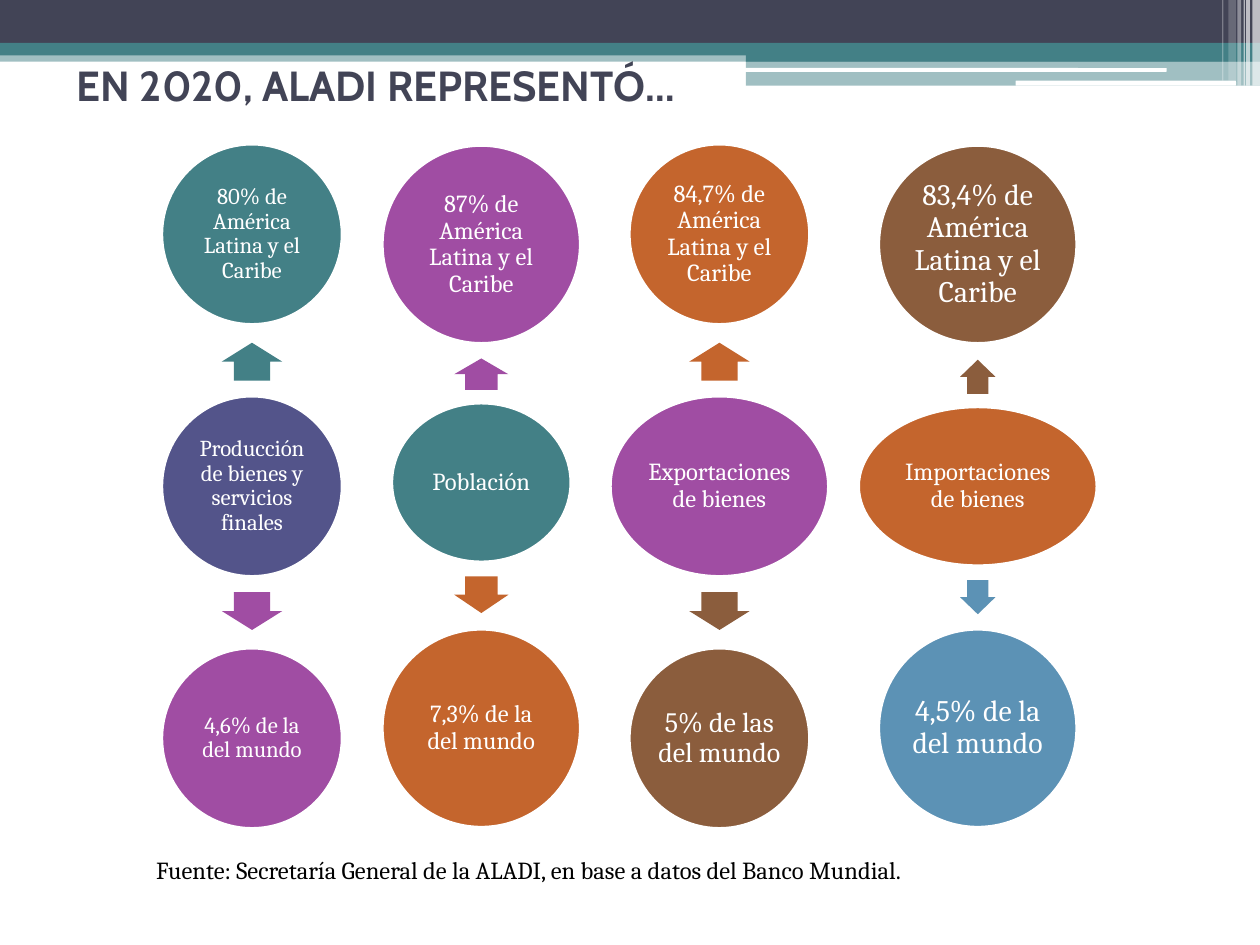
from dataclasses import dataclass

from lxml.etree import SubElement
from pptx import Presentation
from pptx.dml.color import RGBColor
from pptx.enum.shapes import MSO_SHAPE
from pptx.enum.text import MSO_ANCHOR, PP_ALIGN
from pptx.oxml.ns import qn
from pptx.util import Inches, Pt


@dataclass(frozen=True)
class Theme:
    """Colours, fonts and type sizes."""
    dark: str = "424456"
    teal: str = "438086"
    navy: str = "53548A"
    plum: str = "A04DA3"
    rust: str = "C4652D"
    brown: str = "8B5D3D"
    blue: str = "5C92B5"
    white: str = "FFFFFF"
    black: str = "000000"
    head: str = "Cabin"
    body: str = "Cambria"
    big: int = 24
    note: int = 14
    small: int = 13
    mid: int = 14
    large: int = 16
    huge: int = 17


class Deck:
    """Holds the theme and the current slide."""

    def __init__(self, theme):
        """Start a deck with one titled slide."""
        self.theme = theme
        self.show = Presentation()
        self.show.slide_width, self.show.slide_height = Inches(10), Inches(7.5)
        self.slide = self.show.slides.add_slide(self.show.slide_layouts[5])

    def label(self, frame, text, font, size, color, align, bold=False):
        """Set and format the text of a frame."""
        frame.text = text
        frame.word_wrap = True
        para = frame.paragraphs[0]
        para.alignment = align
        for run in para.runs:
            run.font.name, run.font.size, run.font.bold = font, Pt(size), bold
            run.font.color.rgb = RGBColor.from_string(color)
        return para

    def shape(self, kind, box, color, alpha=100):
        """Add a flat shape without an outline."""
        shape = self.slide.shapes.add_shape(kind, *map(Inches, box))
        shape.shadow.inherit = False
        shape.line.fill.background()
        shape.fill.solid()
        shape.fill.fore_color.rgb = RGBColor.from_string(color)
        if alpha < 100:
            tint = shape.element.find(".//" + qn("a:srgbClr"))
            SubElement(tint, qn("a:alpha")).set("val", str(alpha * 1000))
        return shape

    def circle(self, x, y, wide, high, color, text, size):
        """Add an ellipse with text, centred on a point."""
        box = (x - wide / 2, y - high / 2, wide, high)
        shape = self.shape(MSO_SHAPE.OVAL, box, color)
        shape.line.color.rgb = RGBColor.from_string(self.theme.white)
        shape.line.width = Pt(1.5)
        frame = shape.text_frame
        frame.margin_left = frame.margin_right = Inches(0.02)
        frame.margin_top = frame.margin_bottom = Inches(0.02)
        frame.vertical_anchor = MSO_ANCHOR.MIDDLE
        para = self.label(frame, text, self.theme.body, size,
                          self.theme.white, PP_ALIGN.CENTER)
        para.line_spacing = 0.9

    def arrow(self, x, y, long, wide, turn, color):
        """Add a turned block arrow, centred on a point."""
        box = (x - long / 2, y - wide / 2, long, wide)
        shape = self.shape(MSO_SHAPE.RIGHT_ARROW, box, color)
        shape.adjustments[0], shape.adjustments[1] = 0.6, 0.5
        shape.rotation = turn

    def title(self, text):
        """Fill the title and bring it to the front."""
        title = self.slide.shapes.title
        title.left, title.top = Inches(0.51), Inches(0.05)
        title.width, title.height = Inches(9), Inches(1.25)
        title.text_frame.vertical_anchor = MSO_ANCHOR.MIDDLE
        self.label(title.text_frame, text, self.theme.head, self.theme.big,
                   self.theme.dark, PP_ALIGN.LEFT, True)
        title.element.getparent().append(title.element)

    def note(self, text, box):
        """Add a line of source text."""
        area = self.slide.shapes.add_textbox(*map(Inches, box))
        self.label(area.text_frame, text, self.theme.body, self.theme.note,
                   self.theme.black, PP_ALIGN.LEFT)

    def banner(self):
        """Draw the bands and stripes along the top."""
        look = self.theme
        for box, color, alpha in (
            ((0, 0.4, 10, 0.09), look.teal, 50),
            ((0, 0, 10, 0.34), look.dark, 100),
            ((0, 0.34, 10, 0.1), look.teal, 100),
            ((5.92, 0.39, 4.08, 0.1), look.teal, 100),
            ((5.92, 0.48, 4.08, 0.2), look.teal, 50),
        ):
            self.shape(MSO_SHAPE.RECTANGLE, box, color, alpha)
        for box in ((5.91, 0.54, 3.35, 0.03), (8.06, 0.64, 1.75, 0.04)):
            self.shape(MSO_SHAPE.ROUNDED_RECTANGLE, box, look.white)
        for left, wide, high, alpha in (
            (9.94, 0.06, 0.68, 65), (9.89, 0.03, 0.68, 65),
            (9.87, 0.01, 0.68, 60), (9.82, 0.03, 0.68, 40),
            (9.75, 0.06, 0.64, 20), (9.7, 0.01, 0.64, 30),
        ):
            box = (left, 0, wide, high)
            self.shape(MSO_SHAPE.RECTANGLE, box, look.white, alpha)

    def column(self, x, hub, size, span, ends):
        """Draw a central topic with an arrow and a share on each side."""
        y, wide, high, color, text = hub
        self.circle(x, y, wide, high, color, text, size)
        for turn, end in zip((270, 90), ends):
            spot, long, girth, far, color, text, size = end
            self.arrow(x, spot, long, girth, turn, color)
            self.circle(x, far, span, span, color, text, size)


def main():
    """Build and save the slide."""
    look = Theme()
    deck = Deck(look)
    region = "{} de América Latina y el Caribe"
    world = "{} del mundo"
    deck.banner()
    deck.title("EN 2020, ALADI REPRESENTÓ…")
    deck.column(
        2, (3.86, 1.43, 1.43, look.navy,
            "Producción de bienes y servicios finales"), look.small, 1.43,
        ((2.87, 0.3, 0.48, 1.86, look.teal, region.format("80%"), look.small),
         (4.85, 0.3, 0.48, 5.86, look.plum, world.format("4,6% de la"),
          look.small)))
    deck.column(
        3.82, (3.83, 1.42, 1.26, look.teal, "Población"), look.mid, 1.57,
        ((2.97, 0.25, 0.43, 1.94, look.plum, region.format("87%"), look.mid),
         (4.72, 0.29, 0.43, 5.78, look.rust, world.format("7,3% de la"),
          look.mid)))
    deck.column(
        5.71, (3.86, 1.73, 1.43, look.plum, "Exportaciones de bienes"),
        look.mid, 1.43,
        ((2.87, 0.3, 0.48, 1.86, look.rust, region.format("84,7%"), look.mid),
         (4.85, 0.3, 0.48, 5.86, look.brown, world.format("5% de las"),
          look.large)))
    deck.column(
        7.76, (3.86, 1.89, 1.26, look.rust, "Importaciones de bienes"),
        look.mid, 1.57,
        ((2.99, 0.27, 0.28, 1.94, look.brown, region.format("83,4%"),
          look.huge),
         (4.74, 0.27, 0.28, 5.78, look.blue, world.format("4,5% de la"),
          look.huge)))
    deck.note("Fuente: Secretaría General de la ALADI, "
              "en base a datos del Banco Mundial.", (1.14, 6.74, 8.19, 0.34))
    deck.show.save("out.pptx")


if __name__ == "__main__":
    main()
